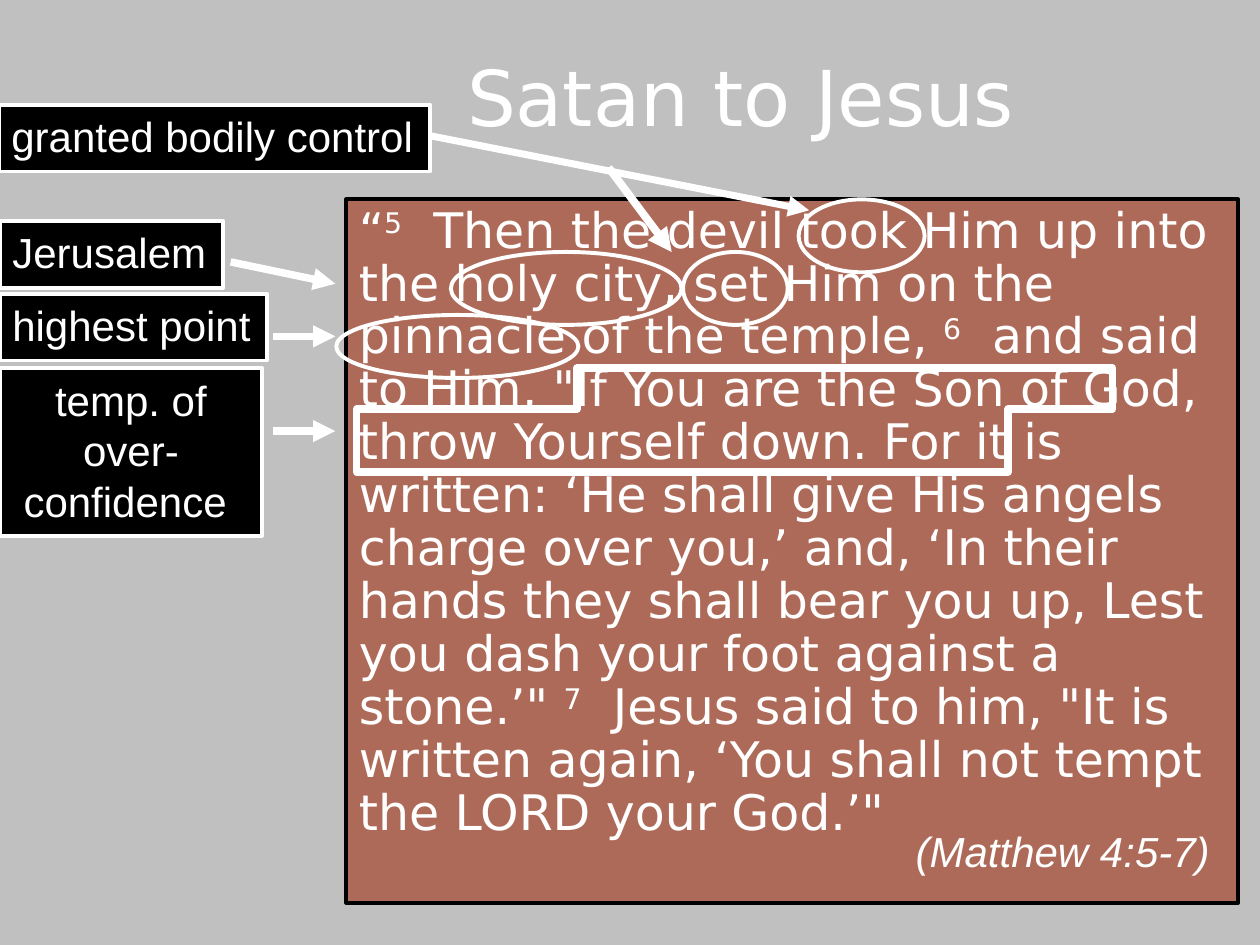
"""Build the "Satan to Jesus" slide with its annotated Bible passage."""
from lxml import etree
from pptx import Presentation
from pptx import util as u
from pptx.dml.color import RGBColor
from pptx.enum import shapes, text
from pptx.oxml.ns import qn

COLORS = {"page": "C0C0C0", "panel": "AE6A58", "ink": "FFFFFF", "dark": "000000"}
COLORS = {name: RGBColor.from_string(value) for name, value in COLORS.items()}


def add_span(para, words, font, size):
    span = para.add_run()
    span.text = words
    span.font.name = font
    span.font.size = u.Pt(size)
    span.font.color.rgb = COLORS["ink"]
    return span


def outline(shape, width, color="ink", fill=None):
    shape.shadow.inherit = False
    shape.line.color.rgb = COLORS[color]
    shape.line.width = u.Pt(width)
    if fill:
        shape.fill.solid()
        shape.fill.fore_color.rgb = COLORS[fill]
    else:
        shape.fill.background()


deck = Presentation()
deck.slide_width, deck.slide_height = u.Cm(25.4), u.Cm(19.05)
page = deck.slides.add_slide(deck.slide_layouts[1])
page.background.fill.solid()
page.background.fill.fore_color.rgb = COLORS["page"]

title = page.shapes.title
title.left, title.top, title.width, title.height = map(u.Cm, (4.88, 0.64, 20.12, 2.34))
title.text_frame.auto_size = text.MSO_AUTO_SIZE.NONE
title.text_frame.vertical_anchor = text.MSO_ANCHOR.BOTTOM
title_para = title.text_frame.paragraphs[0]
title_para.alignment = text.PP_ALIGN.CENTER
add_span(title_para, "Satan to Jesus", "DejaVu Sans", 44)

passage = page.placeholders[1]
passage.left, passage.top, passage.width, passage.height = map(u.Cm, (6.98, 4.02, 17.98, 14.18))
passage.fill.solid()
passage.fill.fore_color.rgb = COLORS["panel"]
passage.line.color.rgb = COLORS["dark"]
passage.line.width = u.Pt(2.25)
passage.text_frame.auto_size = text.MSO_AUTO_SIZE.NONE
passage_para = passage.text_frame.paragraphs[0]
props = passage_para._p.get_or_add_pPr()
props.set("marL", "0")
props.set("indent", "0")
etree.SubElement(props, qn("a:buNone"))
passage_para.line_spacing = 0.9
passage_para.space_before = u.Pt(0)
verses = [
    ("“", "5"),
    ("  Then the devil took Him up into the holy city, set Him on the pinnacle of the temple, ", "6"),
    ("  and said to Him, \"If You are the Son of God, throw Yourself down. For it is written: "
     "‘He shall give His angels charge over you,’ and, ‘In their hands they shall bear you up, "
     "Lest you dash your foot against a stone.’\" ", "7"),
    ("  Jesus said to him, \"It is written again, ‘You shall not tempt the LORD your God.’\"", ""),
]
for words, number in verses:
    add_span(passage_para, words, "DejaVu Sans", 28)
    if number:
        span = add_span(passage_para, number, "DejaVu Sans", 28)
        span.font._element.set("baseline", "30000")

citation = page.shapes.add_textbox(*map(u.Cm, (18.21, 16.51, 6.45, 1.27)))
citation.text_frame.word_wrap = False
span = add_span(citation.text_frame.paragraphs[0], "(Matthew 4:5-7)", "Arial", 24)
span.font.italic = True

labels = [
    ("granted bodily control", (-0.02, 2.11, 8.69, 1.35), False),
    ("Jerusalem", (0, 4.45, 4.5, 1.35), False),
    ("highest point", (0, 5.92, 5.38, 1.35), False),
    ("temp. of over-confidence ", (0, 7.42, 5.28, 3.38), True),
]
for words, place, wraps in labels:
    box = page.shapes.add_textbox(*map(u.Cm, place))
    outline(box, 2.25, fill="dark")
    box.text_frame.word_wrap = wraps
    para = box.text_frame.paragraphs[0]
    para.alignment = text.PP_ALIGN.CENTER if wraps else text.PP_ALIGN.LEFT
    add_span(para, words, "Arial", 24)

circles = [
    (16.1, 4.02, 2.54, 1.47),
    (13.77, 5.08, 2.11, 1.47),
    (9.09, 5.08, 4.65, 1.47),
    (6.78, 6.35, 4.88, 1.27),
]
for place in circles:
    circle = page.shapes.add_shape(shapes.MSO_SHAPE.OVAL, *map(u.Cm, place))
    outline(circle, 2.25)

corners = [(11.63, 7.42), (22.43, 7.42), (22.43, 8.25), (20.32, 8.25),
           (20.32, 9.52), (7.19, 9.52), (7.19, 8.25), (11.63, 8.25)]
points = [(u.Cm(x), u.Cm(y)) for x, y in corners]
builder = page.shapes.build_freeform(*points[0])
builder.add_line_segments(points[1:], close=True)
outline(builder.convert_to_shape(), 4.25)

arrows = [
    ((8.69, 2.74, 16.31, 4.24), 4),
    ((12.27, 3.38, 13.54, 5.08), 4.5),
    ((4.65, 5.28, 6.76, 5.72), 4.25),
    ((5.51, 6.78, 6.76, 6.78), 4.25),
    ((5.51, 8.69, 6.76, 8.69), 4.25),
]
for ends, width in arrows:
    arrow = page.shapes.add_connector(shapes.MSO_CONNECTOR.STRAIGHT, *map(u.Cm, ends))
    arrow.line.color.rgb = COLORS["ink"]
    arrow.line.width = u.Pt(width)
    etree.SubElement(arrow.line._get_or_add_ln(), qn("a:tailEnd"), type="triangle")
    etree.SubElement(arrow._element.spPr, qn("a:effectLst"))

deck.save("out.pptx")
